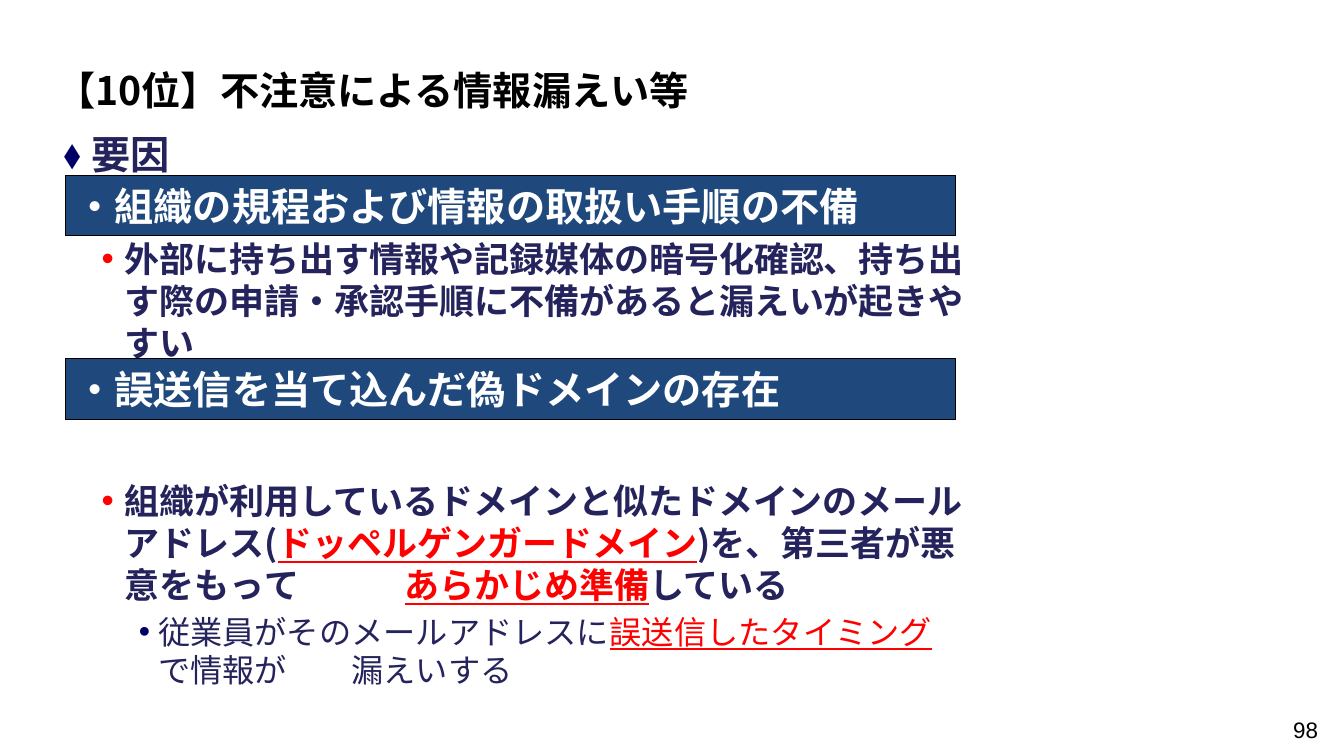
import pptx
import pptx.util
import pptx.dml.color
import pptx.enum.text
import pptx.enum.shapes
import pptx.oxml
from pptx.oxml.ns import qn

Inches, Pt = pptx.util.Inches, pptx.util.Pt
RGBColor = pptx.dml.color.RGBColor
ANCHOR = pptx.enum.text.MSO_ANCHOR
ALIGN = pptx.enum.text.PP_ALIGN

BLACK = RGBColor(0x00, 0x00, 0x00)
WHITE = RGBColor(0xFF, 0xFF, 0xFF)
RED = RGBColor(0xFF, 0x00, 0x00)
INK = RGBColor(0x24, 0x23, 0x5C)
NAVY = RGBColor(0x00, 0x00, 0x66)
BLUE = RGBColor(0x1F, 0x49, 0x7D)
FONT = "Noto Sans CJK JP"

TITLE = "【10位】不注意による情報漏えい等"
PAGE = "98"
BARS = [
    (1.74, "・組織の規程および情報の取扱い手順の不備"),
    (3.56, "・誤送信を当て込んだ偽ドメインの存在"),
]
# Each run: text, marked in red, gap after it in full-width characters
CAUSE = [("要因", False, 0)]
RULES = [("外部に持ち出す情報や記録媒体の暗号化確認、持ち出す際の申請・承認手順に"
          "不備があると漏えいが起きやすい", False, 0)]
FAKE = [
    ("組織が利用しているドメインと似たドメインのメールアドレス(", False, 0),
    ("ドッペルゲンガードメイン", True, 0),
    (")を、第三者が悪意をもっ", False, 0),
    ("て", False, 3),
    ("あらかじめ準備", True, 0),
    ("している", False, 0),
]
LEAK = [
    ("従業員がそのメールアドレスに", False, 0),
    ("誤送信したタイミング", True, 0),
    ("で情報", False, 0),
    ("が", False, 2),
    ("漏えいする", False, 0),
]
HEAD = dict(level=0, left=0.28, hang=0.28, mark="⬧", tint=NAVY, size=28, line=36.5, bold=True)
ITEM = dict(level=1, left=0.61, hang=0.23, mark="•", tint=RED, size=25, line=30, bold=True)
NOTE = dict(level=2, left=0.94, hang=0.19, mark="•", tint=NAVY, size=23, line=27, bold=False)
BODY = [(CAUSE, HEAD, 0), (RULES, ITEM, 43), (FAKE, ITEM, 83), (LEAK, NOTE, 5.5)]


def style(run, size, color, bold=False, face=FONT):
    """Set the font of a run for both Latin and East Asian text."""
    font = run.font
    font.name, font.size, font.bold = face, Pt(size), bold
    font.color.rgb = color
    east = pptx.oxml.parse_xml(
        '<a:ea xmlns:a="http://schemas.openxmlformats.org/drawingml/2006/main" '
        f'typeface="{face}"/>')
    run._r.get_or_add_rPr().find(qn("a:latin")).addnext(east)


def bullet(para, look):
    """Give a paragraph its indent and coloured bullet."""
    props = para._p.get_or_add_pPr()
    props.set("marL", str(Inches(look["left"])))
    props.set("indent", str(-Inches(look["hang"])))
    color = props.makeelement(qn("a:buClr"), {})
    color.append(props.makeelement(qn("a:srgbClr"), {"val": str(look["tint"])}))
    props.append(color)
    props.append(props.makeelement(qn("a:buFont"), {"typeface": "Arial"}))
    props.append(props.makeelement(qn("a:buChar"), {"char": look["mark"]}))


def add_title(slide):
    """Fill and place the title."""
    title = slide.shapes.title
    title.left, title.top = Inches(0.46), Inches(0.4)
    title.width, title.height = Inches(8.82), Inches(0.74)
    frame = title.text_frame
    frame.text = TITLE
    frame.vertical_anchor = ANCHOR.BOTTOM
    frame.margin_bottom = Inches(0.02)
    frame.paragraphs[0].alignment = ALIGN.LEFT
    style(frame.paragraphs[0].runs[0], 28, BLACK, True)


def add_page(slide):
    """Add the page number."""
    box = slide.shapes.add_textbox(Inches(10.06), Inches(7.06), Inches(3.11), Inches(0.31))
    frame = box.text_frame
    frame.word_wrap = True
    frame.text = PAGE
    frame.paragraphs[0].alignment = ALIGN.RIGHT
    style(frame.paragraphs[0].runs[0], 16, BLACK, face="Arial")


def add_body(slide):
    """Add the bulleted text."""
    box = slide.shapes.add_textbox(Inches(0.53), Inches(1.2), Inches(9.13), Inches(5.79))
    frame = box.text_frame
    frame.word_wrap = True
    for num, (runs, look, space) in enumerate(BODY):
        para = frame.add_paragraph() if num else frame.paragraphs[0]
        para.level = look["level"]
        bullet(para, look)
        para.line_spacing = Pt(look["line"])
        para.space_before = Pt(space)
        for text, marked, gap in runs:
            run = para.add_run()
            run.text = text
            style(run, look["size"], RED if marked else INK, look["bold"])
            run.font.underline = marked
            if gap:
                run._r.rPr.set("spc", str(gap * look["size"] * 100))


def add_bar(slide, top, text):
    """Add a blue heading bar."""
    bar = slide.shapes.add_shape(pptx.enum.shapes.MSO_SHAPE.RECTANGLE,
                                 Inches(0.65), Inches(top), Inches(8.83), Inches(0.6))
    bar.shadow.inherit = False
    bar.fill.solid()
    bar.fill.fore_color.rgb = BLUE
    bar.line.color.rgb = BLACK
    bar.line.width = Pt(0.75)
    frame = bar.text_frame
    frame.word_wrap = True
    frame.vertical_anchor = ANCHOR.MIDDLE
    frame.text = text
    frame.paragraphs[0].alignment = ALIGN.LEFT
    style(frame.paragraphs[0].runs[0], 28, WHITE, True)


def main():
    """Build and save the slide."""
    deck = pptx.Presentation()
    deck.slide_width, deck.slide_height = Inches(13.33), Inches(7.5)
    slide = deck.slides.add_slide(deck.slide_layouts[5])
    add_title(slide)
    add_page(slide)
    add_body(slide)
    for top, text in BARS:
        add_bar(slide, top, text)
    deck.save("out.pptx")


if __name__ == "__main__":
    main()
